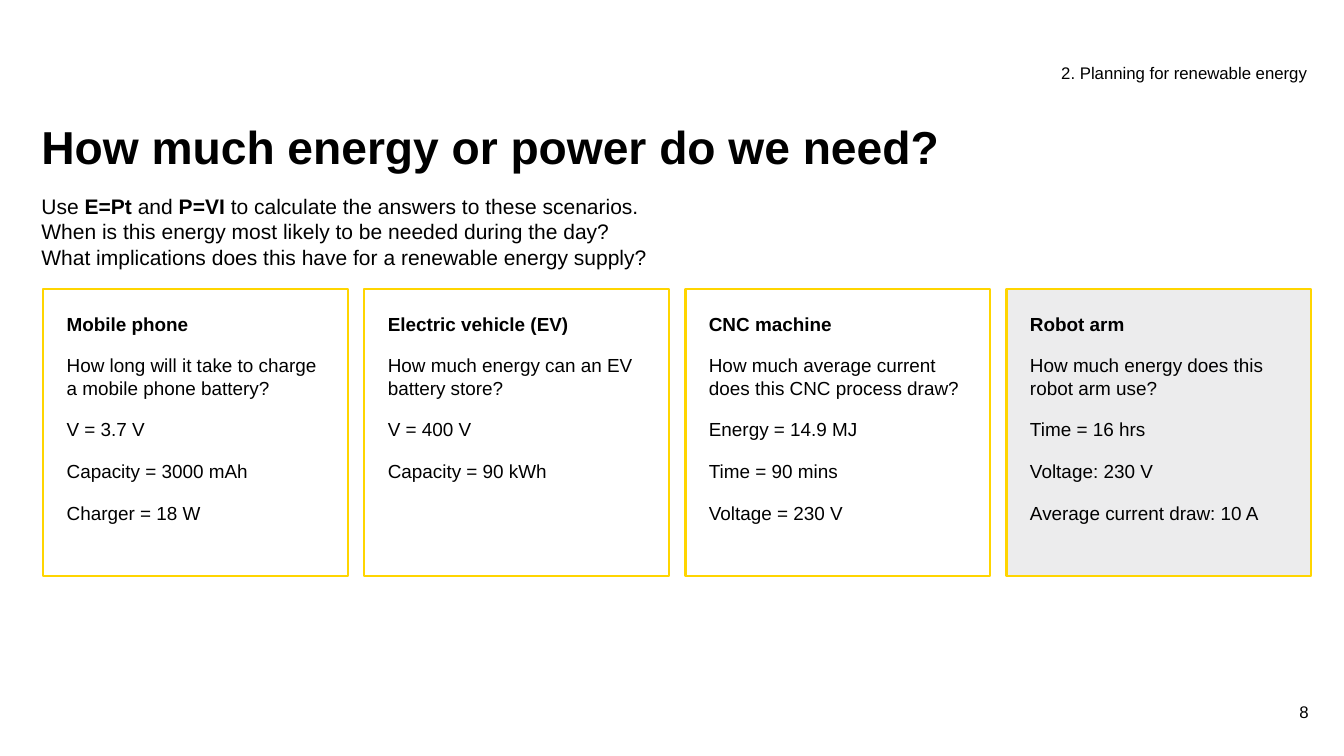
from dataclasses import dataclass

import pptx
import pptx.dml.color
import pptx.enum.shapes
import pptx.enum.text
import pptx.util

Cm = pptx.util.Cm
Pt = pptx.util.Pt
Anchor = pptx.enum.text.MSO_ANCHOR
Align = pptx.enum.text.PP_ALIGN

BLACK = "000000"
YELLOW = "FFD500"
GREY = "ECECED"


@dataclass
class Card:
    title: str
    lines: list[str]
    fill: str | None = None


CARDS = [
    Card("Mobile phone", [
        "How long will it take to charge a mobile phone battery?",
        "V = 3.7 V", "Capacity = 3000 mAh", "Charger = 18 W"]),
    Card("Electric vehicle (EV)", [
        "How much energy can an EV battery store?",
        "V = 400 V", "Capacity = 90 kWh"]),
    Card("CNC machine", [
        "How much average current does this CNC process draw?",
        "Energy = 14.9 MJ", "Time = 90 mins", "Voltage = 230 V"]),
    Card("Robot arm", [
        "How much energy does this robot arm use?",
        "Time = 16 hrs", "Voltage: 230 V", "Average current draw: 10 A"], GREY),
]

INTRO = [
    [("Use ", False), ("E=Pt", True), (" and ", False), ("P=VI", True),
     (" to calculate the answers to these scenarios.", False)],
    [("When is this energy most likely to be needed during the day?", False)],
    [("What implications does this have for a renewable energy supply?", False)],
]


def color(code: str) -> pptx.dml.color.RGBColor:
    return pptx.dml.color.RGBColor.from_string(code)


def style(para, size: float, bold: bool | None = None) -> None:
    font = para.font
    font.name = "Arial"
    font.size = Pt(size)
    font.color.rgb = color(BLACK)
    if bold is not None:
        font.bold = bold


def setup(frame, pad_x: float, pad_y: float, anchor=Anchor.TOP) -> None:
    frame.word_wrap = True
    frame.vertical_anchor = anchor
    frame.margin_left = frame.margin_right = Cm(pad_x)
    frame.margin_top = frame.margin_bottom = Cm(pad_y)


def next_para(frame, index: int):
    return frame.add_paragraph() if index else frame.paragraphs[0]


def add_text(slide, left: float, top: float, width: float, height: float,
             rows: list, size: float, pad_x: float = 0.25,
             pad_y: float = 0.13, anchor=Anchor.TOP):
    box = slide.shapes.add_textbox(Cm(left), Cm(top), Cm(width), Cm(height))
    frame = box.text_frame
    setup(frame, pad_x, pad_y, anchor)
    for index, row in enumerate(rows):
        para = next_para(frame, index)
        for text, bold in row:
            run = para.add_run()
            run.text = text
            if len(row) > 1:
                run.font.bold = bold
        style(para, size, row[0][1] if len(row) == 1 else None)
    return frame


def add_card(slide, card: Card, left: float) -> None:
    shape = slide.shapes.add_shape(
        pptx.enum.shapes.MSO_SHAPE.RECTANGLE,
        Cm(left), Cm(9.7), Cm(10.24), Cm(9.65))
    shape.shadow.inherit = False
    if card.fill:
        shape.fill.solid()
        shape.fill.fore_color.rgb = color(card.fill)
    else:
        shape.fill.background()
    shape.line.color.rgb = color(YELLOW)
    shape.line.width = Pt(2.25)
    frame = shape.text_frame
    setup(frame, 0.79, 0.79)
    for index, text in enumerate([card.title, *card.lines]):
        para = next_para(frame, index)
        para.text = text
        para.alignment = Align.LEFT
        para.space_after = Pt(6)
        if index:
            para.space_before = Pt(12)
        style(para, 18, index == 0)


def main() -> None:
    deck = pptx.Presentation()
    deck.slide_width = Cm(45.16)
    deck.slide_height = Cm(25.4)
    slide = deck.slides.add_slide(deck.slide_layouts[6])

    title = add_text(slide, 1.14, 4.01, 38.94, 2.03,
                     [[("How much energy or power do we need?", True)]],
                     44, anchor=Anchor.MIDDLE)
    title.paragraphs[0].line_spacing = 0.9
    add_text(slide, 1.14, 6.38, 40.87, 1.8, INTRO, 20)
    for index, card in enumerate(CARDS):
        add_card(slide, card, 1.45 + index * 10.79)
    add_text(slide, 35.41, 1.98, 8.82, 1.35,
             [[("2. Planning for renewable energy", False)]], 16)
    page = add_text(slide, 42.47, 23.57, 1.5, 1.35, [[("8", False)]], 16, 0, 0)
    page.paragraphs[0].alignment = Align.RIGHT

    deck.save("out.pptx")


if __name__ == "__main__":
    main()
